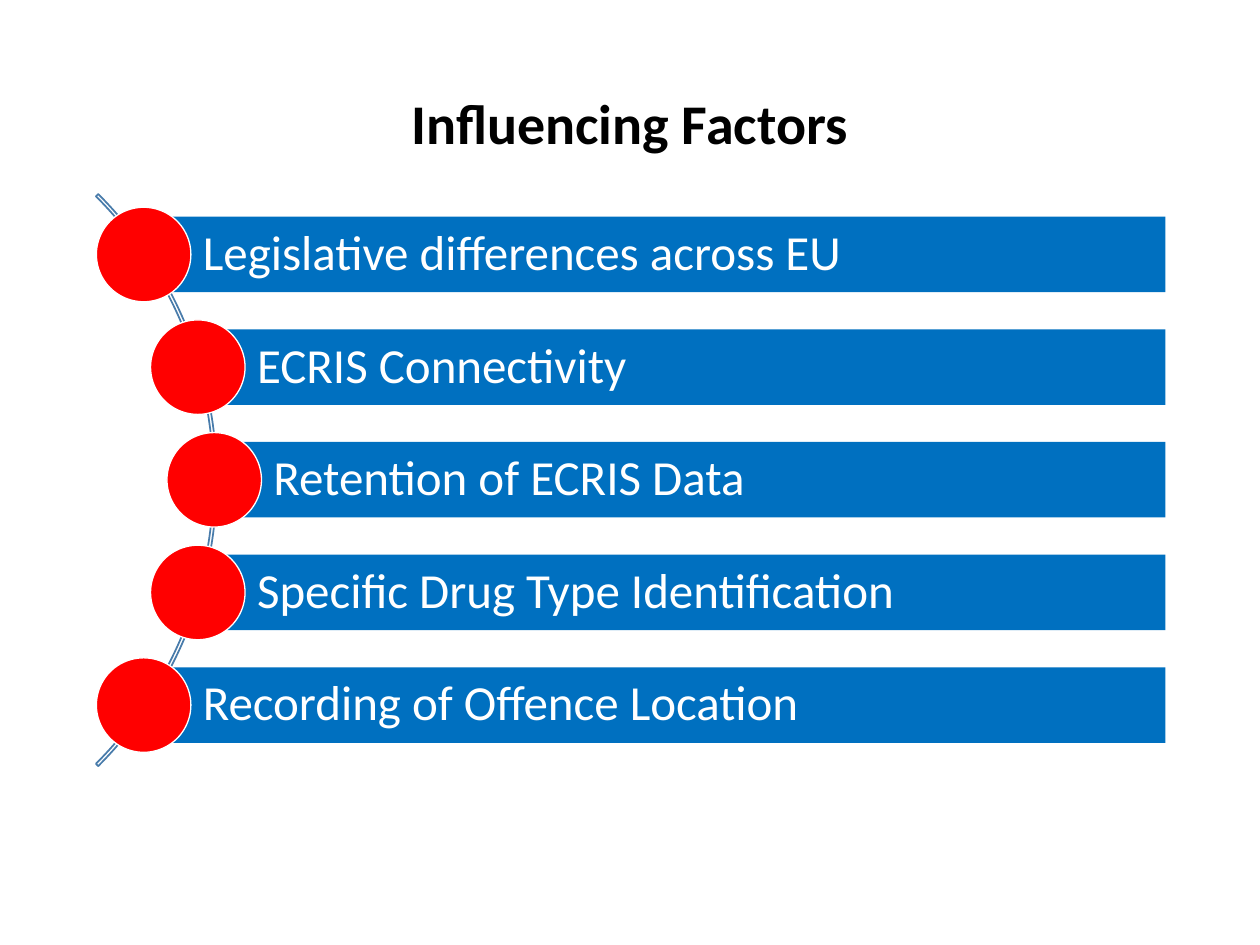
from dataclasses import dataclass

from pptx import Presentation
from pptx.dml.color import RGBColor
from pptx.enum.shapes import MSO_SHAPE
from pptx.enum.text import MSO_ANCHOR, PP_ALIGN
from pptx.util import Inches, Pt

ARC, BAR, DOT = MSO_SHAPE.BLOCK_ARC, MSO_SHAPE.RECTANGLE, MSO_SHAPE.OVAL
MIDDLE = MSO_ANCHOR.MIDDLE
LEFT, CENTER = PP_ALIGN.LEFT, PP_ALIGN.CENTER

TITLE_ONLY = 5
BLUE, RED, WHITE, BLACK, ARC_BLUE = "0070C0", "FF0000", "FFFFFF", "000000", "497CAB"

# Layout of the list, in inches
BAR_RIGHT = 9.25
BAR_HEIGHT = 0.6
DOT_SIZE = 0.75
FIRST_CENTER = 2.02
ROW_STEP = 0.894


@dataclass
class Factor:
    label: str
    left: float


FACTORS = [
    Factor("Legislative differences across EU", 1.14),
    Factor("ECRIS Connectivity", 1.57),
    Factor("Retention of ECRIS Data", 1.7),
    Factor("Specific Drug Type Identification", 1.57),
    Factor("Recording of Offence Location", 1.14),
]


def color(value: str) -> RGBColor:
    return RGBColor.from_string(value)


def add_shape(slide, kind, left: float, top: float, width: float, height: float,
              fill: str = "", line: str = "", line_width: float = 0.75):
    """Add a preset shape without shadow; an empty colour means none."""
    shape = slide.shapes.add_shape(
        kind, Inches(left), Inches(top), Inches(width), Inches(height))
    shape.shadow.inherit = False
    if fill:
        shape.fill.solid()
        shape.fill.fore_color.rgb = color(fill)
    else:
        shape.fill.background()
    if line:
        shape.line.color.rgb = color(line)
        shape.line.width = Pt(line_width)
    else:
        shape.line.fill.background()
    return shape


def write(shape, text: str, align, ink: str, margins: dict, font: dict) -> None:
    """Write one line of formatted text, vertically centred."""
    frame = shape.text_frame
    frame.word_wrap = True
    frame.vertical_anchor = MIDDLE
    for side, length in margins.items():
        setattr(frame, f"margin_{side}", Inches(length))
    para = frame.paragraphs[0]
    para.alignment = align
    para.line_spacing = 0.9
    span = para.add_run()
    span.text = text
    for name, value in font.items():
        setattr(span.font, name, value)
    span.font.color.rgb = color(ink)


def add_factor(slide, factor: Factor, center: float) -> None:
    """Draw a labelled bar with a dot centred on its left edge."""
    bar = add_shape(slide, BAR, factor.left, center - BAR_HEIGHT / 2,
                    BAR_RIGHT - factor.left, BAR_HEIGHT, fill=BLUE)
    write(bar, factor.label, LEFT, WHITE,
          {"left": 0.47, "top": 0.08, "right": 0.08, "bottom": 0.08},
          {"name": "Calibri", "size": Pt(28)})
    add_shape(slide, DOT, factor.left - DOT_SIZE / 2, center - DOT_SIZE / 2,
              DOT_SIZE, DOT_SIZE, fill=RED, line=WHITE)


def main() -> None:
    deck = Presentation()
    deck.slide_width, deck.slide_height = Inches(10), Inches(7.5)
    slide = deck.slides.add_slide(deck.slide_layouts[TITLE_ONLY])

    # Title
    title = slide.shapes.title
    title.left, title.top = Inches(0.69), Inches(0.4)
    title.width, title.height = Inches(8.62), Inches(1.2)
    write(title, "Influencing Factors", CENTER, BLACK, {},
          {"name": "Calibri", "size": Pt(32), "bold": True})

    # Thin arc from 315 to 45 degrees behind the dots
    arc = add_shape(slide, ARC, -4.7, 0.6, 6.42, 6.42, line=ARC_BLUE, line_width=1)
    for index, value in enumerate((189, 27, 0.004)):
        arc.adjustments[index] = value

    # Factors
    for row, factor in enumerate(FACTORS):
        add_factor(slide, factor, FIRST_CENTER + row * ROW_STEP)

    deck.save("out.pptx")


if __name__ == "__main__":
    main()
